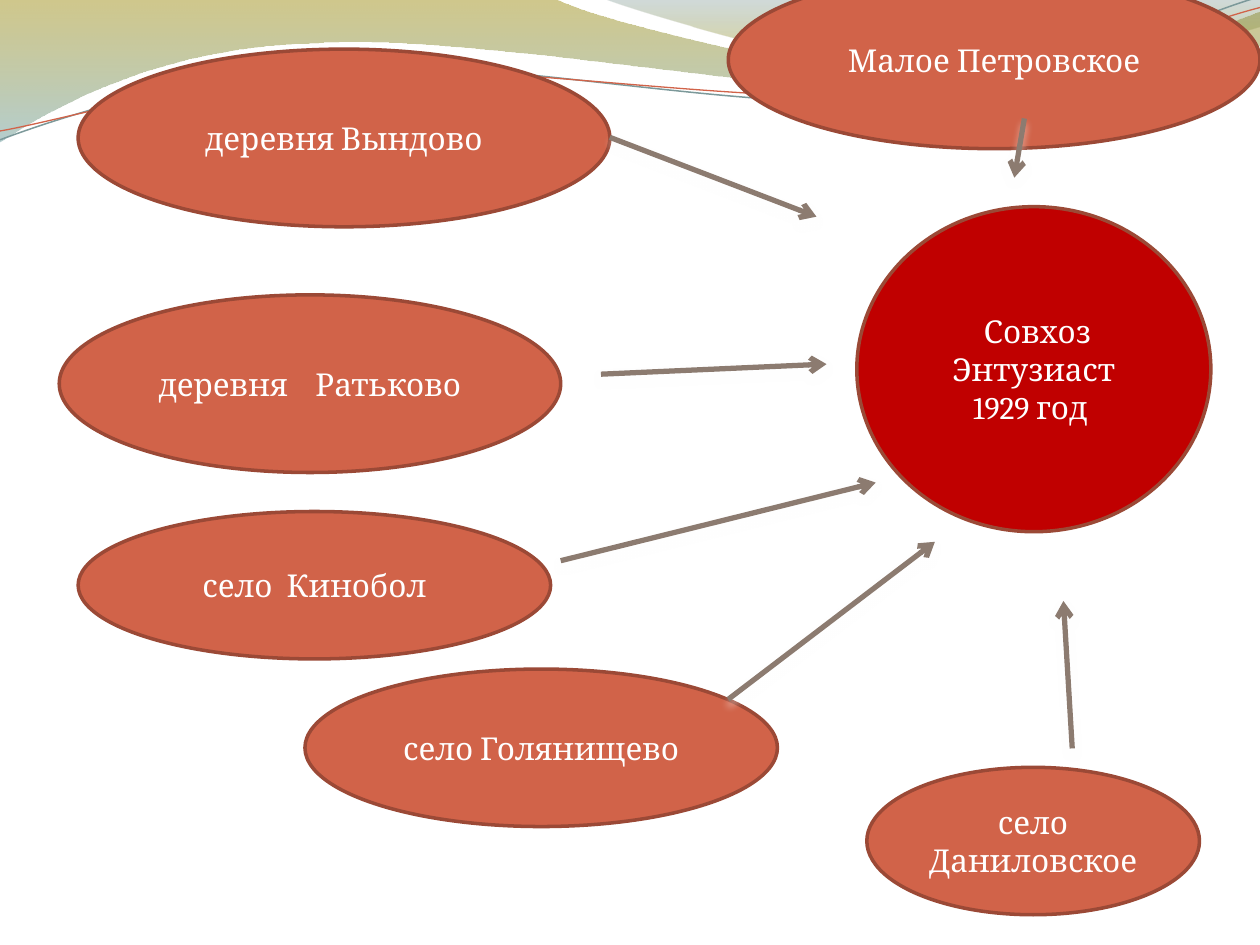
import math
from dataclasses import dataclass

from lxml import etree
from pptx import Presentation
from pptx.dml import color as dml
from pptx.enum import shapes as kinds, text as txt
from pptx.oxml import ns
from pptx.util import Inches, Pt


@dataclass(frozen=True)
class Theme:
    """Colours, font and sizes."""
    font: str = "Cambria"
    size: int = 18
    white: str = "FFFFFF"
    rust: str = "D16349"
    edge: str = "9B4936"
    red: str = "C00000"
    arrow: str = "8C7B70"
    teal: str = "7C999A"
    rim: float = 2
    shaft: float = 3
    wide: tuple = (("978500", 45, 0), ("77A5A6", 55, 1))
    side: tuple = (("648484", 30, 0), ("B49F00", 45, 0.8))


T = Theme()
TILT = -2.7
HUB = (6.8, 1.64, 2.81, 2.58)
SITES = [
    ((0.62, 0.39, 4.22, 1.41), "деревня", "Вындово", 0),
    ((0.47, 2.34, 3.98, 1.41), "деревня", "Ратьково", 12),
    ((0.62, 4.06, 3.75, 1.17), "село", "Кинобол", 4),
    ((2.42, 5.31, 3.75, 1.25), "село", "Голянищево", 0),
    ((6.88, 6.09, 2.64, 1.17), "село", "Даниловское", 0),
    ((5.78, -0.23, 4.22, 1.41), "Малое", "Петровское", 0),
]
ARROWS = [
    (4.84, 1.09, 6.48, 1.72), (4.77, 2.97, 6.56, 2.89),
    (4.45, 4.45, 6.95, 3.83), (5.78, 5.55, 7.42, 4.3),
    (8.51, 5.94, 8.44, 4.77), (8.13, 0.94, 8.05, 1.41),
]
WIDE = [
    (0, 0), (4.4, -0.01), (4.76, 0.17, 6.64, 0.63, 7.58, 0.63),
    (8.53, 0.63, 9.58, 0.26, 10, 0.09), (10.01, 0.36),
    (9.83, 0.44, 8.7, 0.76, 7.46, 0.75), (6.22, 0.75, 3.82, 0.28, 2.57, 0.34),
    (1.29, 0.36, 0.46, 0.83, -0.01, 1.13),
]
SIDE = [
    (4.79, -0.01), (5.09, 0.11, 6.82, 0.62, 7.69, 0.65),
    (8.56, 0.69, 9.61, 0.32, 10, 0.21), (10, 0),
]
CURVES = [
    (T.teal, 0.85, (4.99, 0.57),
     [(0, 1.11), (0.48, 0.93, 1.58, 0.57, 2.77, 0.52),
      (3.95, 0.47, 5.93, 0.89, 7.13, 0.8), (8.33, 0.71, 9.38, 0.15, 9.98, -0.02)]),
    (T.rust, 0.75, (5, 0.59),
     [(0, 1.04), (0.47, 0.96, 1.64, 0.61, 2.83, 0.56),
      (4.03, 0.51, 5.97, 0.84, 7.17, 0.75), (8.36, 0.67, 9.41, 0.21, 10, 0.06)]),
]


def rgb(code):
    """Return the colour for a hex code."""
    return dml.RGBColor.from_string(code)


def child(node, tag, **attrs):
    """Append a drawing element with its attributes."""
    return etree.SubElement(node, ns.qn(tag), {k: str(v) for k, v in attrs.items()})


def pairs(part):
    """Split a path part into points in EMU."""
    return [(Inches(x), Inches(y)) for x, y in zip(part[::2], part[1::2])]


def turn(part, pivot, angle):
    """Rotate the points of a path part about a pivot."""
    cos, sin = math.cos(math.radians(angle)), math.sin(math.radians(angle))
    out = []
    for x, y in zip(part[::2], part[1::2]):
        dx, dy = x - pivot[0], y - pivot[1]
        out += [pivot[0] + dx * cos - dy * sin, pivot[1] + dx * sin + dy * cos]
    return out


def draw(slide, path, close):
    """Build an outline of straight and Bezier parts."""
    ends = [pairs(part)[-1] for part in path]
    pen = slide.shapes.build_freeform(*ends[0])
    pen.add_line_segments(ends[1:], close=close)
    shape = pen.convert_to_shape()
    shape.shadow.inherit = False
    left, top = shape.left, shape.top
    lines = list(shape.element.spPr.iter(ns.qn("a:lnTo")))
    for line, part in zip(lines, path[1:]):
        if len(part) == 6:
            curve = etree.Element(ns.qn("a:cubicBezTo"))
            for x, y in pairs(part):
                child(curve, "a:pt", x=x - left, y=y - top)
            line.getparent().replace(line, curve)
    return shape


def band(slide, path, stops):
    """Draw a wave with a see-through vertical gradient."""
    shape = draw(slide, path, True)
    shape.line.fill.background()
    shape.fill.gradient()
    shape.fill.gradient_angle = 270
    for stop, (tint, alpha, place) in zip(shape.fill.gradient_stops, stops):
        stop.color.rgb = rgb(tint)
        stop.position = place
    for node, (_, alpha, _) in zip(shape.element.spPr.iter(ns.qn("a:srgbClr")), stops):
        child(node, "a:alpha", val=alpha * 1000)


def header(slide):
    """Draw the waves along the top edge."""
    band(slide, WIDE, T.wide)
    band(slide, SIDE, T.side)
    for tint, width, pivot, path in CURVES:
        shape = draw(slide, [turn(part, pivot, -TILT) for part in path], False)
        shape.rotation = TILT
        shape.fill.background()
        shape.line.color.rgb = rgb(tint)
        shape.line.width = Pt(width)


def oval(slide, box, fill, words, gap=0):
    """Place a labelled ellipse, widening its space by gap points."""
    shape = slide.shapes.add_shape(kinds.MSO_SHAPE.OVAL, *map(Inches, box))
    shape.shadow.inherit = False
    shape.fill.solid()
    shape.fill.fore_color.rgb = rgb(fill)
    shape.line.color.rgb = rgb(T.edge)
    shape.line.width = Pt(T.rim)
    frame = shape.text_frame
    frame.word_wrap = True
    frame.vertical_anchor = txt.MSO_ANCHOR.MIDDLE
    para = frame.paragraphs[0]
    para.alignment = txt.PP_ALIGN.CENTER
    for part in [words[0], " ", words[1]] if gap else [" ".join(words)]:
        run = para.add_run()
        run.text = part
        run.font.name = T.font
        run.font.size = Pt(T.size)
        run.font.color.rgb = rgb(T.white)
        if part == " ":
            run.font._element.set("spc", str(gap * 100))


def arrow(slide, ends):
    """Draw an open-headed arrow with a soft pale shadow."""
    link = slide.shapes.add_connector(kinds.MSO_CONNECTOR.STRAIGHT, *map(Inches, ends))
    link.line.color.rgb = rgb(T.arrow)
    link.line.width = Pt(T.shaft)
    child(link.line._get_or_add_ln(), "a:tailEnd", type="arrow")
    glow = child(child(link._element.spPr, "a:effectLst"), "a:outerShdw",
                 blurRad=Pt(4.5), dist=Pt(3), dir=5400000, rotWithShape=0)
    child(child(glow, "a:srgbClr", val=T.white), "a:alpha", val=48000)


def main():
    """Build and save the slide."""
    deck = Presentation()
    deck.slide_width, deck.slide_height = Inches(10), Inches(7.5)
    slide = deck.slides.add_slide(deck.slide_layouts[6])
    header(slide)
    oval(slide, HUB, T.red, (" Совхоз", "Энтузиаст", "1929 год "))
    for box, kind, name, gap in SITES:
        oval(slide, box, T.rust, (kind, name), gap)
    for ends in ARROWS:
        arrow(slide, ends)
    deck.save("out.pptx")


if __name__ == "__main__":
    main()
